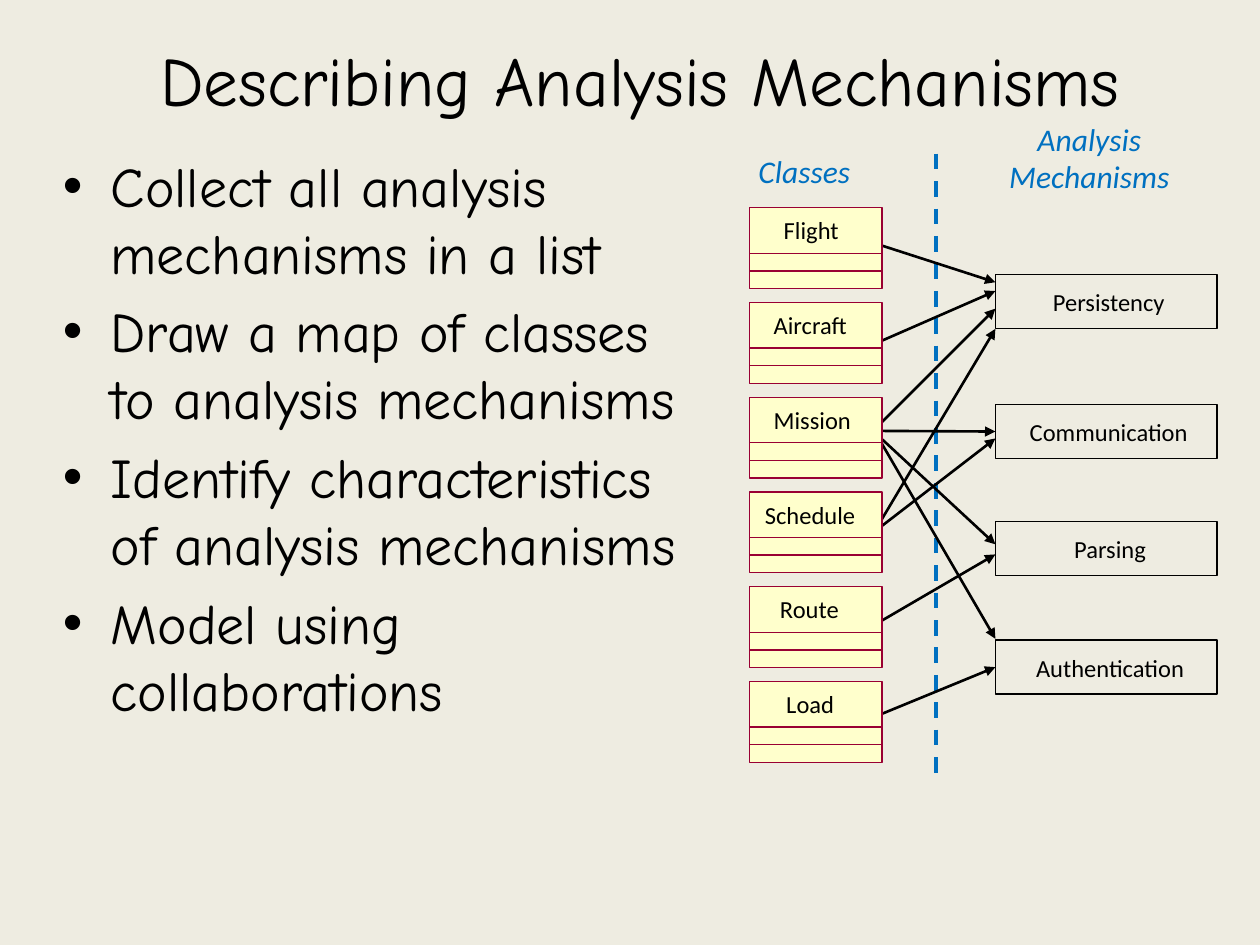
from lxml.etree import SubElement
from pptx import Presentation
from pptx.dml.color import RGBColor
from pptx.enum.dml import MSO_LINE
from pptx.enum.shapes import MSO_CONNECTOR, MSO_SHAPE
from pptx.enum.text import MSO_ANCHOR, PP_ALIGN
from pptx.oxml.ns import qn
from pptx.util import Inches, Pt

BACKGROUND = RGBColor(0xEE, 0xEC, 0xE1)
BLACK = RGBColor(0, 0, 0)
BLUE = RGBColor(0x00, 0x70, 0xC0)
CREAM = RGBColor(0xFF, 0xFF, 0xCC)
MAROON = RGBColor(0x99, 0x00, 0x33)

# Grid of the diagram, in inches
CLASS_LEFT, CLASS_WIDTH = 5.95, 1.05
CLASS_TOP, CLASS_HEIGHT, CLASS_PITCH = 1.65, 0.64, 0.752
MECHANISM_LEFT, MECHANISM_WIDTH, MECHANISM_HEIGHT = 7.9, 1.76, 0.43
ARROW_START = 6.94


def add_text(shapes, box, lines, size, font="Calibri", color=BLACK,
             align=PP_ALIGN.LEFT, insets=(0.12, 0.06), wrap=True):
    """Add a text box with one paragraph per line; box is in inches."""
    text_frame = shapes.add_textbox(*map(Inches, box)).text_frame
    text_frame.word_wrap = wrap
    text_frame.margin_left = text_frame.margin_right = Inches(insets[0])
    text_frame.margin_top = text_frame.margin_bottom = Inches(insets[1])
    text_frame.text = "\n".join(lines)
    for paragraph in text_frame.paragraphs:
        paragraph.alignment = align
        paragraph.font.size = Pt(size)
        paragraph.font.name = font
        paragraph.font.color.rgb = color
    return text_frame


def add_line(shapes, start, end, color, width):
    line = shapes.add_connector(MSO_CONNECTOR.STRAIGHT,
                                *map(Inches, (*start, *end)))
    line.line.color.rgb = color
    line.line.width = Pt(width)
    SubElement(line._element.spPr, qn("a:effectLst"))
    return line


presentation = Presentation()
presentation.slide_width, presentation.slide_height = Inches(10), Inches(7.5)
slide = presentation.slides.add_slide(presentation.slide_layouts[6])
slide.background.fill.solid()
slide.background.fill.fore_color.rgb = BACKGROUND
shapes = slide.shapes

# Bulleted text and title
bullets = ["Collect all analysis mechanisms in a list",
           "Draw a map of classes to analysis mechanisms",
           "Identify characteristics of analysis mechanisms",
           "Model using collaborations"]
body = add_text(shapes, (0.4, 1.15, 5.34, 5.52), bullets, 32, "Comic Neue",
                insets=(0.1, 0.05))
for index, paragraph in enumerate(body.paragraphs):
    properties = paragraph._p.get_or_add_pPr()
    properties.set("marL", str(Inches(0.38)))
    properties.set("indent", str(Inches(-0.38)))
    SubElement(properties, qn("a:buFont")).set("typeface", "Arial")
    SubElement(properties, qn("a:buChar")).set("char", "•")
    # The bullet elements belong ahead of the run defaults
    properties.append(properties.find(qn("a:defRPr")))
    if index:
        paragraph.space_before = Pt(6.4)

title = add_text(shapes, (0.58, 0, 9, 1.25), ["Describing Analysis Mechanisms"],
                 39.6, "Comic Neue", align=PP_ALIGN.CENTER, insets=(0.1, 0.05))
title.vertical_anchor = MSO_ANCHOR.MIDDLE

# Column headings and divider
for heading, box, align in [
        ("Classes", (5.9, 1.15, 1.14, 0.42), PP_ALIGN.LEFT),
        ("Analysis Mechanisms", (7.79, 0.89, 1.71, 0.72), PP_ALIGN.CENTER)]:
    text_frame = add_text(shapes, box, [heading], 18, color=BLUE, align=align)
    text_frame.paragraphs[0].font.italic = True
divider = add_line(shapes, (7.43, 1.22), (7.43, 6.22), BLUE, 2.25)
divider.line.dash_style = MSO_LINE.DASH

# Mechanisms: name, top of box, centre and width of label
mechanisms = {}
for name, top, center, width in [("Persistency", 2.18, 8.8, 1.35),
                                 ("Communication", 3.21, 8.8, 1.74),
                                 ("Parsing", 4.14, 8.81, 0.96),
                                 ("Authentication", 5.08, 8.81, 1.62)]:
    box = shapes.add_shape(MSO_SHAPE.RECTANGLE, Inches(MECHANISM_LEFT), Inches(top),
                           Inches(MECHANISM_WIDTH), Inches(MECHANISM_HEIGHT))
    box.shadow.inherit = False
    box.fill.background()
    box.line.color.rgb = BLACK
    box.line.width = Pt(0.75)
    mechanisms[name] = box
    add_text(shapes, (center - width / 2, top + 0.04, width, 0.35), [name], 14,
             align=PP_ALIGN.CENTER)

# Arrows: start and end heights, and the mechanism joined at its left middle
for start, end, joined in [(1.93, 2.24, None), (2.73, 2.31, None),
                           (3.42, 5.07, None), (3.41, 2.45, None),
                           (3.42, 3.42, "Communication"), (3.43, 4.32, None),
                           (4.22, 3.48, None), (5.69, 5.3, "Authentication"),
                           (4.22, 2.61, None), (4.96, 4.4, None)]:
    arrow = add_line(shapes, (ARROW_START, start), (MECHANISM_LEFT, end), BLACK, 1.5)
    SubElement(arrow.line._get_or_add_ln(), qn("a:tailEnd")).set("type", "triangle")
    if joined:
        arrow.end_connect(mechanisms[joined], 1)

# Classes: name, left and width of label
for row, (name, left, width) in enumerate([
        ("Flight", 6.22, 0.47), ("Aircraft", 6.14, 0.61),
        ("Mission", 6.14, 0.66), ("Schedule", 6.07, 0.81),
        ("Route", 6.19, 0.52), ("Load", 6.24, 0.43)]):
    top = CLASS_TOP + row * CLASS_PITCH
    members = shapes.add_group_shape().shapes
    box = members.add_shape(MSO_SHAPE.RECTANGLE, Inches(CLASS_LEFT), Inches(top),
                            Inches(CLASS_WIDTH), Inches(CLASS_HEIGHT))
    box.shadow.inherit = False
    box.fill.solid()
    box.fill.fore_color.rgb = CREAM
    box.line.color.rgb = MAROON
    box.line.width = Pt(0.75)
    for offset in (0.36, 0.5):
        add_line(members, (CLASS_LEFT, top + offset),
                 (CLASS_LEFT + CLASS_WIDTH, top + offset), MAROON, 0.75)
    add_text(members, (left, top + 0.06, width, 0.23), [name], 14,
             insets=(0, 0), wrap=False)

presentation.save("out.pptx")
